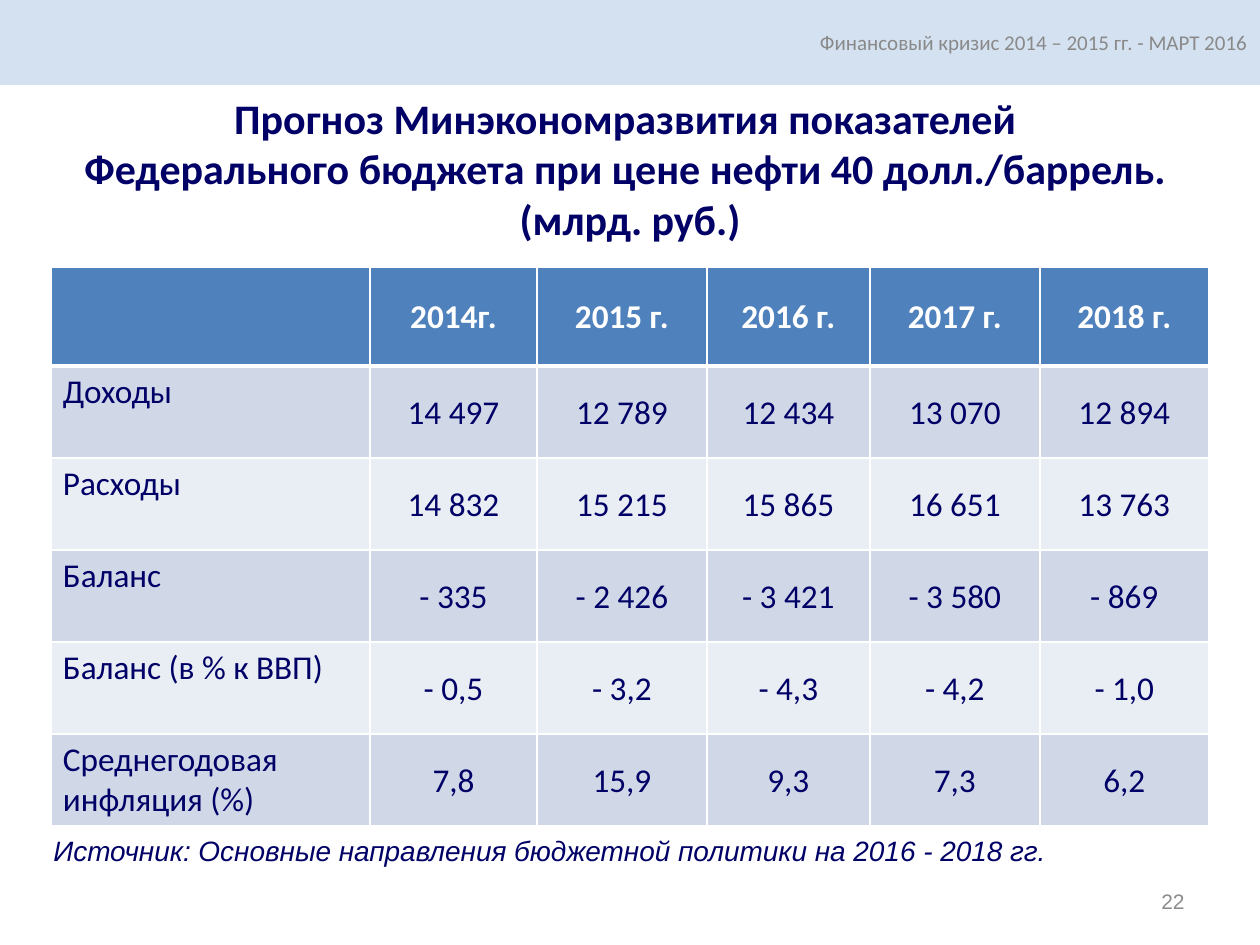
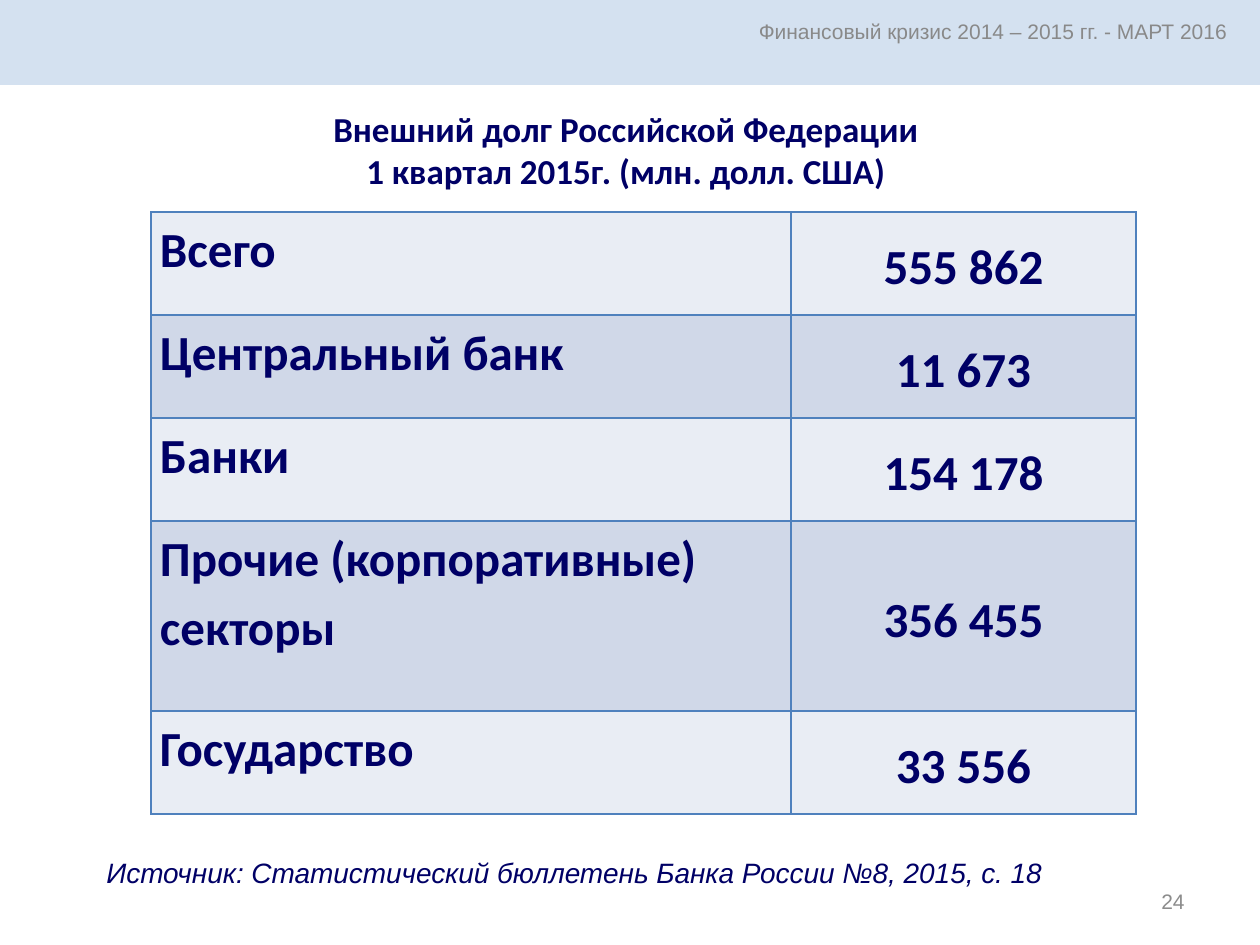
from dataclasses import dataclass

import pptx
import pptx.dml.color
import pptx.enum.shapes
import pptx.enum.text
import pptx.oxml.ns
import pptx.util
from lxml import etree

SCALE = 914400 / 126  # EMU in one px
NAVY, WHITE, BLUE = "000066", "FFFFFF", "4F81BD"
BAND, GREY, PAGE_GREY = "D4E1F0", "898989", "8C8C8C"
DARK_ROW, LIGHT_ROW = "D0D8E8", "E9EDF4"
RUNNING_HEAD = "Финансовый кризис 2014 – 2015 гг. - МАРТ 2016"
ALIGN = pptx.enum.text.PP_ALIGN
ANCHOR = pptx.enum.text.MSO_ANCHOR


@dataclass
class Box:
    x: int
    y: int
    w: int
    h: int

    def emu(self) -> list[int]:
        return [px(v) for v in (self.x, self.y, self.w, self.h)]


@dataclass
class TableStyle:
    size: int
    bold: bool
    border: str
    fills: tuple[str, str]  # alternating body rows
    margin_x: int
    margin_top: int
    margin_bottom: int
    spacing: float = 1.0
    header: bool = False


def px(n: int) -> int:
    return round(n * SCALE)


def rgb(color: str) -> pptx.dml.color.RGBColor:
    return pptx.dml.color.RGBColor.from_string(color)


def write(tf, text: str, *, size: int, color: str, font: str = "Calibri",
          bold: bool = False, italic: bool = False, align=ALIGN.LEFT,
          spacing: float = 1.0) -> None:
    """Fill a text frame, one paragraph for each line of text."""
    tf.word_wrap = True
    for i, line in enumerate(text.split("\n")):
        p = tf.paragraphs[0] if i == 0 else tf.add_paragraph()
        p.alignment = align
        p.line_spacing = spacing
        r = p.add_run()
        r.text = line
        r.font.name, r.font.size = font, pptx.util.Pt(size)
        r.font.bold, r.font.italic = bold, italic
        r.font.color.rgb = rgb(color)


def add_text(s, box: Box, text: str, *, anchor=ANCHOR.MIDDLE, **fmt) -> None:
    tf = s.shapes.add_textbox(*box.emu()).text_frame
    tf.vertical_anchor = anchor
    write(tf, text, **fmt)


def add_band(s):
    sp = s.shapes.add_shape(pptx.enum.shapes.MSO_SHAPE.RECTANGLE,
                            *Box(0, 0, 1260, 85).emu())
    sp.shadow.inherit = False
    sp.fill.solid()
    sp.fill.fore_color.rgb = rgb(BAND)
    sp.line.fill.background()
    sp.text_frame.vertical_anchor = ANCHOR.MIDDLE
    return sp


def add_title(s, box: Box, text: str, size: int) -> None:
    add_text(s, box, text, size=size, color=NAVY, bold=True, align=ALIGN.CENTER)


def add_source(s, box: Box, text: str) -> None:
    add_text(s, box, text, anchor=ANCHOR.TOP, size=16, color=NAVY,
             font="Arial", italic=True)


def add_page_number(s, number: int) -> None:
    add_text(s, Box(903, 876, 294, 50), str(number), size=12, color=PAGE_GREY,
             font="Arial", align=ALIGN.RIGHT)


def set_borders(cell, color: str, bottom: int = 1, top: int = 1) -> None:
    tc_pr = cell._tc.get_or_add_tcPr()
    widths = {"lnL": 1, "lnR": 1, "lnT": top, "lnB": bottom}
    for i, (tag, width) in enumerate(widths.items()):
        ln = etree.Element(pptx.oxml.ns.qn(f"a:{tag}"), w=str(pptx.util.Pt(width)))
        fill = etree.SubElement(ln, pptx.oxml.ns.qn("a:solidFill"))
        etree.SubElement(fill, pptx.oxml.ns.qn("a:srgbClr"), val=color)
        tc_pr.insert(i, ln)


def add_table(s, x: int, y: int, cols: list[int], heights: list[int],
              rows: list[list[str]], style: TableStyle) -> None:
    box = Box(x, y, sum(cols), sum(heights))
    table = s.shapes.add_table(len(rows), len(cols), *box.emu()).table
    table.first_row = style.header
    for column, width in zip(table.columns, cols):
        column.width = px(width)
    for i, (row, height) in enumerate(zip(rows, heights)):
        table.rows[i].height = px(height)
        is_header = style.header and i == 0
        for j, text in enumerate(row):
            cell = table.cell(i, j)
            is_label = j == 0
            cell.margin_left = cell.margin_right = px(style.margin_x)
            cell.margin_top = px(style.margin_top)
            cell.margin_bottom = px(style.margin_bottom)
            cell.vertical_anchor = ANCHOR.TOP if is_label else ANCHOR.MIDDLE
            cell.fill.solid()
            cell.fill.fore_color.rgb = rgb(BLUE if is_header else style.fills[i % 2])
            set_borders(cell, style.border, bottom=3 if is_header else 1,
                        top=3 if style.header and i == 1 else 1)
            if text:
                write(cell.text_frame, text, size=style.size,
                      color=WHITE if is_header else NAVY,
                      bold=style.bold or is_header, spacing=style.spacing,
                      align=ALIGN.LEFT if is_label else ALIGN.CENTER)


def budget_slide(prs) -> None:
    s = prs.slides.add_slide(prs.slide_layouts[6])
    add_title(s, Box(0, 92, 1260, 152),
              "Прогноз Минэкономразвития показателей \n"
              "Федерального бюджета при цене нефти 40 долл./баррель. \n"
              "(млрд. руб.)", 24)
    band = add_band(s)
    write(band.text_frame, RUNNING_HEAD, size=12, color=GREY, align=ALIGN.RIGHT)
    add_source(s, Box(41, 827, 1177, 47),
               "Источник: Основные направления бюджетной политики на 2016 - 2018 гг.")

    # Budget forecast by year
    rows = [
        ["", "2014г.", "2015 г.", "2016 г.", "2017 г.", "2018 г."],
        ["Доходы", "14 497", "12 789", "12 434", "13 070", "12 894"],
        ["Расходы", "14 832", "15 215", "15 865", "16 651", "13 763"],
        ["Баланс", "- 335", "- 2 426", "- 3 421", "- 3 580", "- 869"],
        ["Баланс (в % к ВВП)", "- 0,5", "- 3,2", "- 4,3", "- 4,2", "- 1,0"],
        ["Среднегодовая инфляция (%)", "7,8", "15,9", "9,3", "7,3", "6,2"],
    ]
    style = TableStyle(size=19, bold=False, border=WHITE, fills=(LIGHT_ROW, DARK_ROW),
                       margin_x=12, margin_top=6, margin_bottom=4, header=True)
    add_table(s, 51, 267, [319, 167, 170, 163, 170, 169],
              [99] + [92] * 5, rows, style)
    add_page_number(s, 22)


def debt_slide(prs) -> None:
    s = prs.slides.add_slide(prs.slide_layouts[6])
    add_page_number(s, 24)
    add_band(s)
    add_text(s, Box(465, 8, 775, 46), RUNNING_HEAD, size=12, color=GREY,
             font="Arial", align=ALIGN.RIGHT)
    add_title(s, Box(-4, 101, 1260, 98),
              "Внешний долг Российской Федерации\n1 квартал 2015г. (млн. долл. США)", 20)
    add_source(s, Box(94, 849, 987, 47),
               "Источник: Статистический бюллетень Банка России №8, 2015, с. 18")

    # External debt by sector
    rows = [
        ["Всего", "555 862"],
        ["Центральный банк", "11 673"],
        ["Банки", "154 178"],
        ["Прочие (корпоративные) секторы", "356 455"],
        ["Государство", "33 556"],
    ]
    style = TableStyle(size=28, bold=True, border=BLUE, fills=(LIGHT_ROW, DARK_ROW),
                       margin_x=9, margin_top=0, margin_bottom=0, spacing=1.15)
    add_table(s, 151, 212, [640, 345], [103, 103, 103, 190, 103], rows, style)


def main() -> None:
    prs = pptx.Presentation()
    prs.slide_width, prs.slide_height = px(1260), px(945)
    budget_slide(prs)
    debt_slide(prs)
    prs.save("out.pptx")


if __name__ == "__main__":
    main()
